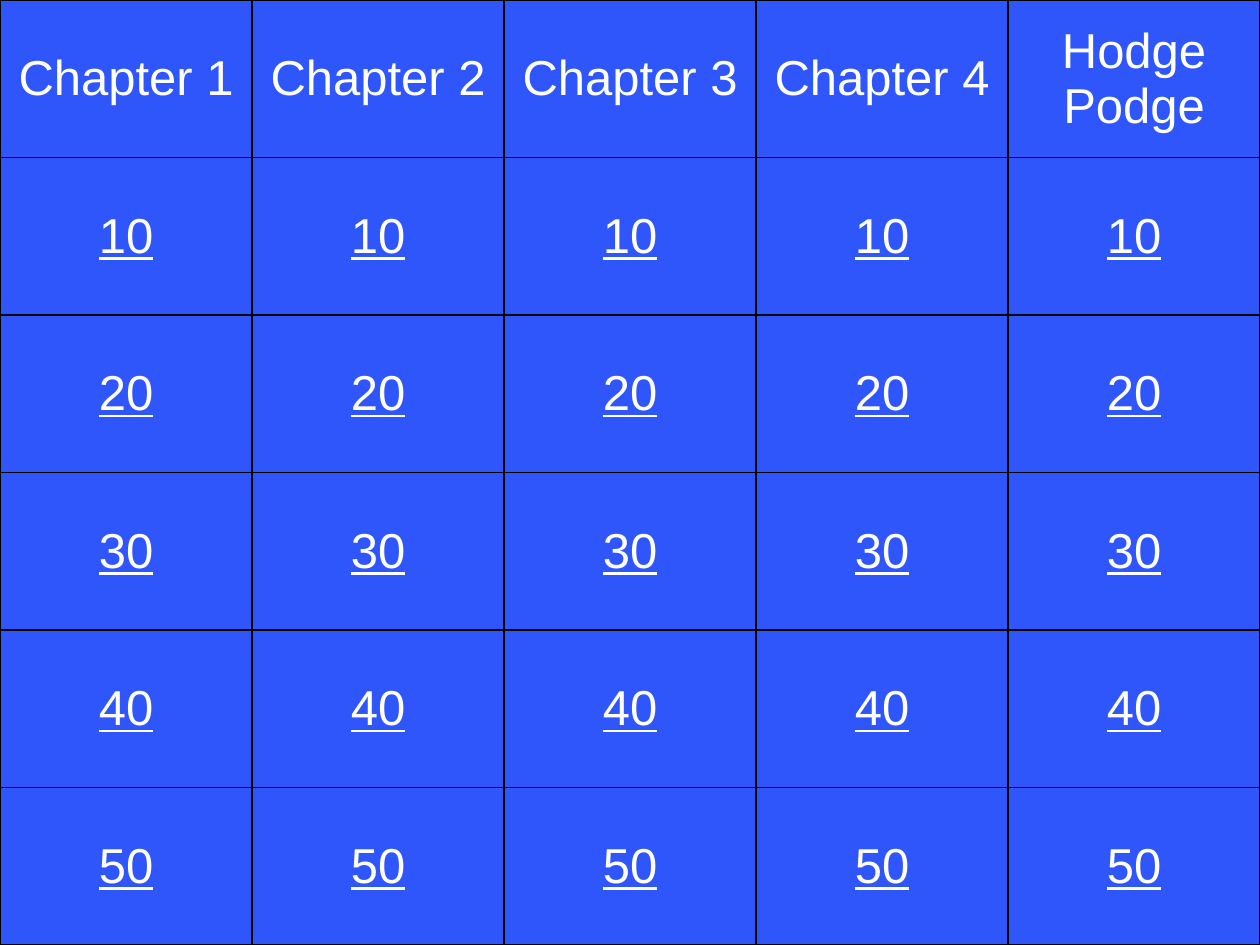
from lxml import etree
from pptx import Presentation
from pptx.dml.color import RGBColor
from pptx.enum.text import MSO_ANCHOR, PP_ALIGN
from pptx.oxml.ns import qn
from pptx.util import Inches, Pt

CENTER = PP_ALIGN.CENTER
MIDDLE = MSO_ANCHOR.MIDDLE

BLUE, WHITE, BLACK = "2F56FB", "FFFFFF", "000000"
CATEGORIES = ["Chapter 1", "Chapter 2", "Chapter 3", "Chapter 4", "Hodge Podge"]
POINTS = [10, 20, 30, 40, 50]


def rgb(color):
    return RGBColor.from_string(color)


def write(tf, text, size=28, font="Arial", color=WHITE, underline=None):
    p = tf.paragraphs[0]
    p.alignment = CENTER
    r = p.add_run()
    r.text = text
    r.font.size = Pt(size)
    r.font.name = font
    r.font.color.rgb = rgb(color)
    r.font.underline = underline


def add_borders(cell, color=BLACK, width=1):
    tc_pr = cell._tc.get_or_add_tcPr()
    for side in ("lnL", "lnR", "lnT", "lnB"):
        ln = etree.SubElement(tc_pr, qn(f"a:{side}"), w=str(Pt(width)))
        fill = etree.SubElement(ln, qn("a:solidFill"))
        etree.SubElement(fill, qn("a:srgbClr"), val=color)


def add_board(slide, left, top, width, height):
    """Place the quiz grid: a row of categories above a row for each point value."""
    rows = [CATEGORIES] + [[str(points)] * len(CATEGORIES) for points in POINTS]
    table = slide.shapes.add_table(
        len(rows), len(CATEGORIES),
        Inches(left), Inches(top), Inches(width), Inches(height)).table
    table.first_row = False
    table.horz_banding = False
    for i, row in enumerate(rows):
        for j, text in enumerate(row):
            cell = table.cell(i, j)
            cell.vertical_anchor = MIDDLE
            add_borders(cell)
            cell.fill.background()
            write(cell.text_frame, text, underline=True if i else None)


def main():
    prs = Presentation()
    prs.slide_width, prs.slide_height = Inches(10), Inches(7.5)
    slide = prs.slides.add_slide(prs.slide_layouts[6])
    background = slide.background.fill
    background.solid()
    background.fore_color.rgb = rgb(BLUE)
    add_board(slide, 0, 0, 10, 7.5)
    prs.save("out.pptx")


if __name__ == "__main__":
    main()
